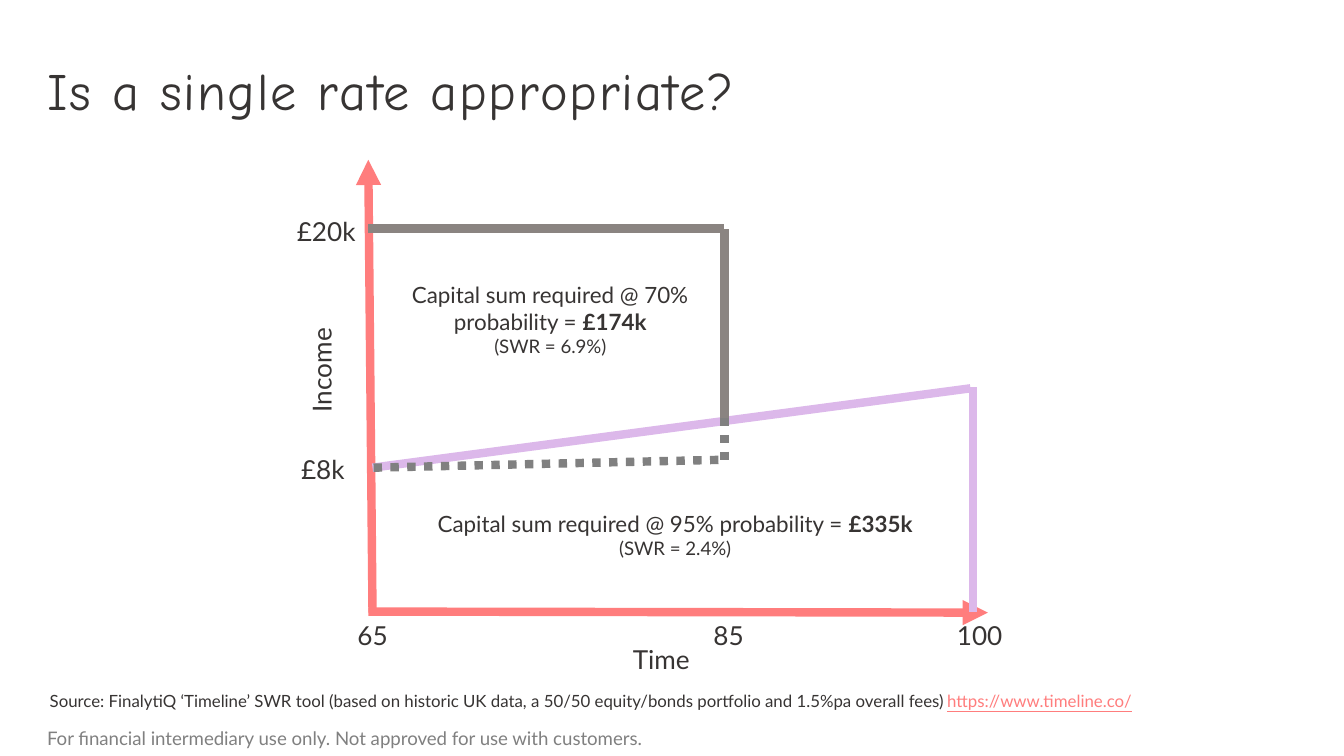
"""Build the slide comparing income paths and capital sums for a single withdrawal rate."""
from lxml.etree import SubElement
from pptx import Presentation
from pptx.dml.color import RGBColor
from pptx.enum.dml import MSO_LINE
from pptx.enum.shapes import MSO_CONNECTOR
from pptx.enum.text import MSO_ANCHOR, MSO_AUTO_SIZE as AUTO, PP_ALIGN
from pptx.oxml.ns import qn
from pptx.util import Cm, Pt

INK = RGBColor(0x37, 0x34, 0x33)
GREY = RGBColor(0x80, 0x80, 0x80)
STONE = RGBColor(0x8A, 0x84, 0x81)
CORAL = RGBColor(0xFF, 0x7D, 0x7D)
LILAC = RGBColor(0xDC, 0xB8, 0xEA)

TITLE = "Is a single rate appropriate?"
DISCLAIMER = "For financial intermediary use only. Not approved for use with customers."
SOURCE = ("Source: FinalytiQ ‘Timeline’ SWR tool (based on historic UK data, "
          "a 50/50 equity/bonds portfolio and 1.5%pa overall fees) ")
LINK = "https://www.timeline.co/"

LEFT, AGE_85, AGE_100 = 6.96, 13.69, 18.39
TOP_INCOME, CROSSING, LOW_INCOME = 4.32, 7.9, 8.84
LABEL_HEIGHT, AGE_Y = 0.86, 12.01

LINES = [
    ((LEFT, 11.56), (18.67, 11.58), CORAL, "arrow"),
    ((7.04, 11.58), (LEFT, 3.02), CORAL, "arrow"),
    ((AGE_100, 11.56), (AGE_100, 7.32), LILAC, "solid"),
    ((7.04, LOW_INCOME), (18.34, 7.34), LILAC, "solid"),
    ((AGE_85, CROSSING), (AGE_85, TOP_INCOME), STONE, "solid"),
    ((AGE_85, TOP_INCOME), (LEFT, TOP_INCOME), STONE, "solid"),
    ((7.06, LOW_INCOME), (AGE_85, 8.69), GREY, "dotted"),
    ((AGE_85, CROSSING), (AGE_85, 8.69), GREY, "dotted"),
]

LABELS = [
    ("65", 7.05, AGE_Y, 1.09, 0),
    ("85", 13.78, AGE_Y, 1.09, 0),
    ("100", 18.52, AGE_Y, 1.37, 0),
    ("Time", 12.51, 12.47, 1.6, 0),
    ("Income", 6.08, 6.91, 2.26, 270),
    ("£8k", 6.14, 8.87, 1.4, 0),
    ("£20k", 6.21, 4.37, 1.7, 0),
]

NOTES = [
    ((10.4, 6.04, 5.94, 1.7), [
        [("Capital sum required @ 70%", 12, False)],
        [("probability = ", 12, False), ("£174k", 12, True)],
        [("(SWR = 6.9%)", 10, False)],
    ]),
    ((12.76, 10.11, 9.73, 1.19), [
        [("Capital sum required @ 95% probability = ", 12, False), ("£335k", 12, True)],
        [("(SWR = 2.4%)", 10, False)],
    ]),
]


def add_line(s, start, end, color, style):
    line = s.shapes.add_connector(MSO_CONNECTOR.STRAIGHT, *map(Cm, start + end))
    line.line.color.rgb = color
    line.line.width = Pt(4.5)
    if style == "dotted":
        line.line.dash_style = MSO_LINE.ROUND_DOT
    if style == "arrow":
        SubElement(line.line._get_or_add_ln(), qn("a:tailEnd"), type="triangle")
    SubElement(line._element.spPr, qn("a:effectLst"))


def add_box(s, left, top, width, height, wrap=True, auto=AUTO.NONE):
    sp = s.shapes.add_textbox(*map(Cm, (left, top, width, height)))
    tf = sp.text_frame
    tf.word_wrap = wrap
    tf.auto_size = auto
    return sp


def add_centred_box(s, x, y, width, height):
    return add_box(s, x - width / 2, y - height / 2, width, height, False, AUTO.SHAPE_TO_FIT_TEXT)


def add_run(p, text, size, color=INK, bold=False, font="Lato"):
    r = p.add_run()
    r.text = text
    r.font.name = font
    r.font.size = Pt(size)
    r.font.bold = bold
    r.font.color.rgb = color
    return r


def main():
    prs = Presentation()
    prs.slide_width, prs.slide_height = Cm(25.4), Cm(14.29)
    s = prs.slides.add_slide(prs.slide_layouts[6])

    tf = add_box(s, 0.79, 0, 22.71, 2.31).text_frame
    tf.vertical_anchor = MSO_ANCHOR.BOTTOM
    tf.margin_left = tf.margin_right = Cm(0.1)
    tf.margin_top = tf.margin_bottom = Cm(0.05)
    p = tf.paragraphs[0]
    p.line_spacing = 0.7
    r = add_run(p, TITLE, 28, font="Comic Neue")
    r.font._element.set("spc", "100")

    for line in LINES:
        add_line(s, *line)

    for text, x, y, width, angle in LABELS:
        sp = add_centred_box(s, x, y, width, LABEL_HEIGHT)
        sp.rotation = angle
        add_run(sp.text_frame.paragraphs[0], text, 14)

    for place, paragraphs in NOTES:
        tf = add_centred_box(s, *place).text_frame
        for i, runs in enumerate(paragraphs):
            p = tf.add_paragraph() if i else tf.paragraphs[0]
            p.alignment = PP_ALIGN.CENTER
            for text, size, bold in runs:
                add_run(p, text, size, bold=bold)

    p = add_box(s, 0.69, 12.93, 23.01, 0.64, auto=AUTO.SHAPE_TO_FIT_TEXT).text_frame.paragraphs[0]
    add_run(p, SOURCE, 9)
    add_run(p, LINK, 9, CORAL).font.underline = True

    tf = add_box(s, 0.79, 13.69, 17.4, 0.51).text_frame
    tf.vertical_anchor = MSO_ANCHOR.MIDDLE
    tf.margin_left = Cm(0.1)
    add_run(tf.paragraphs[0], DISCLAIMER, 10, GREY)

    prs.save("out.pptx")


if __name__ == "__main__":
    main()
